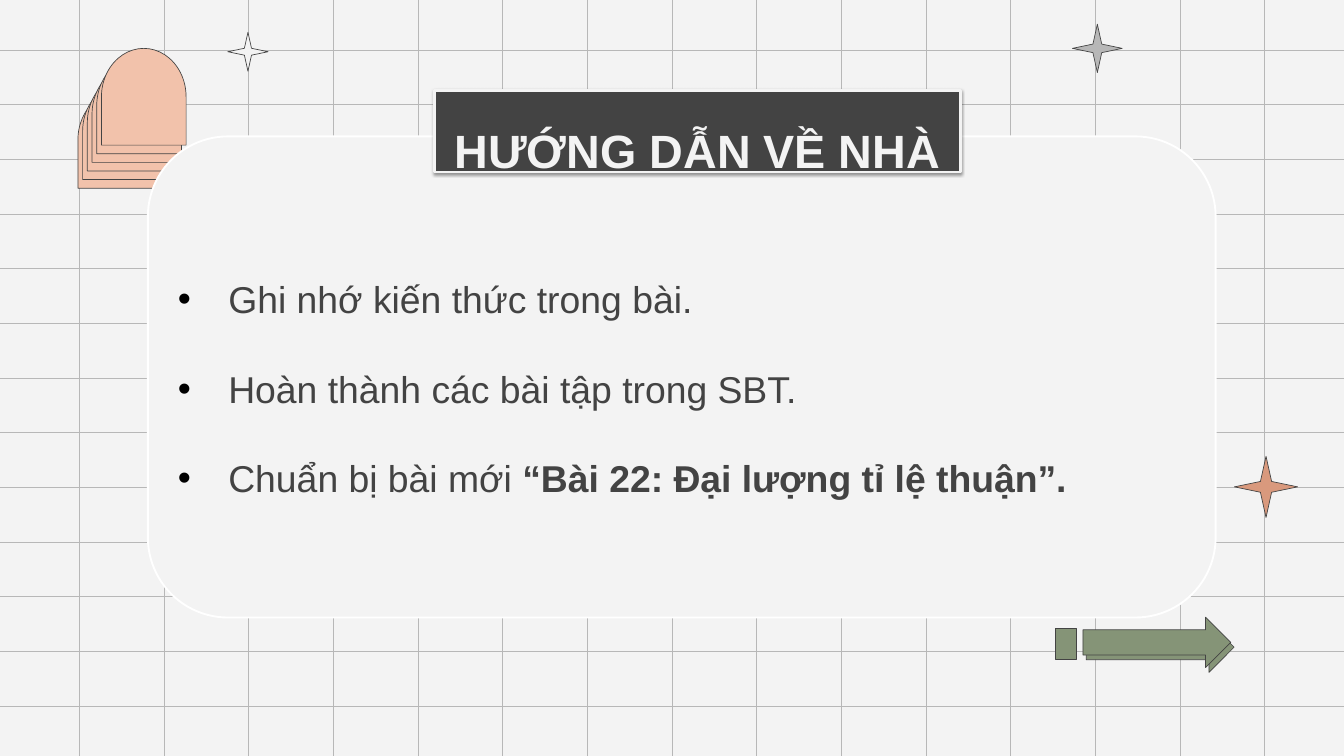
from lxml import etree
from pptx import Presentation
from pptx.dml.color import RGBColor
from pptx.enum.shapes import MSO_CONNECTOR, MSO_SHAPE
from pptx.enum.text import MSO_ANCHOR, MSO_AUTO_SIZE, PP_ALIGN
from pptx.oxml import parse_xml
from pptx.oxml.ns import nsdecls, qn
from pptx.util import Inches, Pt

TITLE = "HƯỚNG DẪN VỀ NHÀ"
TASKS = [
    [("Ghi nhớ kiến thức trong bài.", False)],
    [("Hoàn thành các bài tập trong SBT.", False)],
    [("Chuẩn bị bài mới ", False), ("“Bài 22: Đại lượng tỉ lệ thuận”.", True)],
]

PAPER = RGBColor(0xF3, 0xF3, 0xF3)
GRID = RGBColor(0xB7, 0xB7, 0xB7)
INK = RGBColor(0x43, 0x43, 0x43)
WHITE = RGBColor(0xFF, 0xFF, 0xFF)
PEACH = RGBColor(0xF2, 0xC2, 0xAB)
CLAY = RGBColor(0xD9, 0x99, 0x7D)
SAGE = RGBColor(0x85, 0x94, 0x77)
FONT = "Arial"

# Inches
WIDTH, HEIGHT = 20, 11.25
BLEED = 0.08
COLUMNS, COLUMN_STEP = 15, 1.26
ROWS, ROW_STEP = 13, 4.88 / 6
ARCHES, FIRST_ARCH, LAST_ARCH = 6, (1.07, 1.45), (1.42, 0.81)
STARS = [
    ((3.39, 0.48, 0.6, 0.58), PAPER),
    ((15.96, 0.36, 0.74, 0.72), GRID),
    ((18.37, 6.79, 0.94, 0.91), CLAY),
]
ARROW_PARTS = [
    (MSO_SHAPE.UP_ARROW, (16.89, 8.53, 0.75, 2.2), 90),
    (MSO_SHAPE.RECTANGLE, (15.7, 9.35, 0.32, 0.46), 0),
    (MSO_SHAPE.UP_ARROW, (16.84, 8.46, 0.75, 2.2), 90),
]
CARD = (2.2, 2.03, 15.89, 7.16)
TITLE_BOX = (6.47, 1.35, 7.82, 1.21)


def paint(shape, fill, line, line_width):
    shape.fill.solid()
    shape.fill.fore_color.rgb = fill
    shape.line.color.rgb = line
    shape.line.width = Pt(line_width)


def add_shape(slide, kind, box, fill, line=INK, line_width=0.75, rotation=0):
    shape = slide.shapes.add_shape(kind, *map(Inches, box))
    shape.shadow.inherit = False
    shape.rotation = rotation
    paint(shape, fill, line, line_width)
    return shape


def add_grid_line(slide, x1, y1, x2, y2):
    line = slide.shapes.add_connector(
        MSO_CONNECTOR.STRAIGHT, *map(Inches, (x1, y1, x2, y2)))
    line.line.color.rgb = GRID
    line.line.width = Pt(0.75)
    etree.SubElement(line._element.spPr, qn("a:effectLst"))


def halves(length):
    """Split a length, with its bleed, at the middle of the slide."""
    return (-BLEED, length / 2), (length / 2, length + BLEED)


def add_grid(slide):
    """Draw lines at equal steps to both sides of the slide's centre."""
    for column in range(COLUMNS):
        x = WIDTH / 2 + (column - COLUMNS // 2) * COLUMN_STEP
        for start, end in halves(HEIGHT):
            add_grid_line(slide, x, start, x, end)
    for row in range(ROWS):
        y = HEIGHT / 2 + (row - ROWS // 2) * ROW_STEP
        for start, end in halves(WIDTH):
            add_grid_line(slide, start, y, end, y)


def add_run(paragraph, text, size, color, bold):
    run = paragraph.add_run()
    run.text = text
    run.font.name = FONT
    run.font.size = Pt(size)
    run.font.color.rgb = color
    run.font.bold = bold


def add_bullet(paragraph):
    properties = paragraph._p.get_or_add_pPr()
    properties.set("marL", str(Inches(0.75)))
    properties.set("indent", str(-Inches(0.75)))
    for xml in ('<a:buClr {}><a:srgbClr val="000000"/></a:buClr>',
                '<a:buFont {} typeface="Arial"/>',
                '<a:buChar {} char="•"/>'):
        properties.append(parse_xml(xml.format(nsdecls("a"))))


def add_decorations(slide):
    for arch in range(ARCHES):
        left, top = (first + (last - first) * arch / (ARCHES - 1)
                     for first, last in zip(FIRST_ARCH, LAST_ARCH))
        add_shape(slide, MSO_SHAPE.FLOWCHART_DELAY, (left, top, 1.44, 1.26),
                  PEACH, rotation=270)
    for box, fill in STARS:
        star = add_shape(slide, MSO_SHAPE.STAR_4_POINT, box, fill)
        star.adjustments[0] = 0.125
    for kind, box, rotation in ARROW_PARTS:
        add_shape(slide, kind, box, SAGE, rotation=rotation)


def add_task_card(slide):
    card = add_shape(slide, MSO_SHAPE.ROUNDED_RECTANGLE, CARD, PAPER, WHITE, 2)
    frame = card.text_frame
    frame.word_wrap = True
    frame.vertical_anchor = MSO_ANCHOR.MIDDLE
    for index, task in enumerate(TASKS):
        paragraph = frame.add_paragraph() if index else frame.paragraphs[0]
        add_bullet(paragraph)
        paragraph.alignment = PP_ALIGN.JUSTIFY
        paragraph.line_spacing = 1.5
        paragraph.space_before = Pt(12 if index else 0)
        paragraph.space_after = Pt(12)
        for text, bold in task:
            add_run(paragraph, text, 40, INK, bold)


def format_title(slide):
    """Turn the title placeholder into the dark, shadowed label on the card."""
    title = slide.shapes.title
    title.left, title.top, title.width, title.height = map(Inches, TITLE_BOX)
    paint(title, INK, PAPER, 3)
    title._element.spPr.append(parse_xml(
        f'<a:effectLst {nsdecls("a")}>'
        f'<a:outerShdw blurRad="{Pt(3.1)}" dist="{Pt(1.6)}" dir="5400000">'
        '<a:srgbClr val="000000"><a:alpha val="38000"/></a:srgbClr>'
        '</a:outerShdw></a:effectLst>'))
    frame = title.text_frame
    frame.word_wrap = True
    frame.auto_size = MSO_AUTO_SIZE.SHAPE_TO_FIT_TEXT
    frame.vertical_anchor = MSO_ANCHOR.TOP
    paragraph = frame.paragraphs[0]
    paragraph.alignment = PP_ALIGN.CENTER
    paragraph.line_spacing = 1.5
    paragraph.space_before = Pt(0)
    paragraph.space_after = Pt(16)
    add_run(paragraph, TITLE, 50, PAPER, True)
    slide.shapes._spTree.append(title._element)  # bring to front


def main():
    deck = Presentation()
    deck.slide_width, deck.slide_height = Inches(WIDTH), Inches(HEIGHT)
    slide = deck.slides.add_slide(deck.slide_layouts.get_by_name("Title Only"))
    slide.background.fill.solid()
    slide.background.fill.fore_color.rgb = PAPER
    add_grid(slide)
    add_decorations(slide)
    add_task_card(slide)
    format_title(slide)
    deck.save("out.pptx")


if __name__ == "__main__":
    main()
